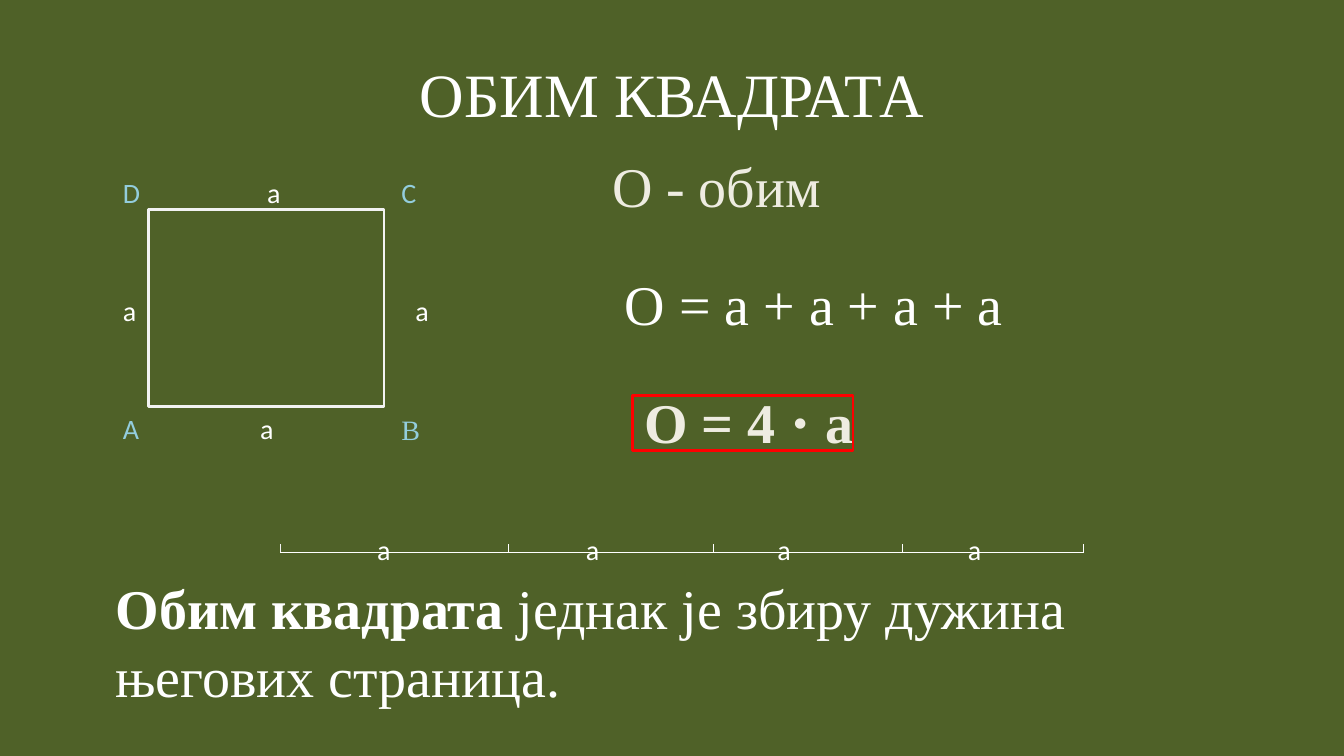
import pptx
import pptx.dml.color
import pptx.enum.shapes
import pptx.enum.text
import pptx.oxml.ns
import pptx.util
import lxml.etree

# The slide is a grid of 100 columns by 100 rows
WIDTH, HEIGHT = 13.33, 7.5
SANS, SERIF = "Calibri", "Times New Roman"
ASCENT = {SANS: 0.95, SERIF: 0.89}
COLORS = {
    "board": "4F6128",
    "white": "FFFFFF",
    "outline": "F2F2F2",
    "vertex": "93CDDD",
    "formula": "EEECE1",
    "frame": "FF0000",
}


def across(columns):
    return pptx.util.Inches(columns * WIDTH / 100)


def down(rows):
    return pptx.util.Inches(rows * HEIGHT / 100)


def color(name):
    return pptx.dml.color.RGBColor.from_string(COLORS[name])


def add_run(paragraph, text, font, size, color_name, bold=False):
    run = paragraph.add_run()
    run.text = text
    run.font.name = font
    run.font.size = pptx.util.Pt(size)
    run.font.bold = bold
    run.font.color.rgb = color(color_name)


def add_box(slide, left, top, width, height, wrap=False):
    box = slide.shapes.add_textbox(across(left), top, across(width), down(height))
    frame = box.text_frame
    frame.word_wrap = wrap
    frame.margin_left = frame.margin_right = 0
    frame.margin_top = frame.margin_bottom = 0
    return frame.paragraphs[0]


def add_label(slide, text, left, baseline, color_name="white", font=SANS, size=20, bold=False):
    """Place one line of text so that it stands on the given baseline row."""
    top = down(baseline) - pptx.util.Pt(ASCENT[font] * size)
    width, height = (2, 4.6) if size == 20 else (30, 8.2)
    paragraph = add_box(slide, left, top, width, height)
    paragraph.alignment = pptx.enum.text.PP_ALIGN.LEFT
    add_run(paragraph, text, font, size, color_name, bold)


def add_outline(slide, left, top, width, height, color_name):
    shape = slide.shapes.add_shape(
        pptx.enum.shapes.MSO_SHAPE.RECTANGLE,
        across(left), down(top), across(width), down(height))
    shape.shadow.inherit = False
    shape.fill.background()
    shape.line.color.rgb = color(color_name)
    shape.line.width = pptx.util.Pt(2)


def add_line(slide, left, top, right, bottom, color_name="white"):
    line = slide.shapes.add_connector(
        pptx.enum.shapes.MSO_CONNECTOR.STRAIGHT,
        across(left), down(top), across(right), down(bottom))
    line.line.color.rgb = color(color_name)
    line.line.width = pptx.util.Pt(0.75)
    properties = line._element.spPr
    lxml.etree.SubElement(properties, pptx.oxml.ns.qn("a:effectLst"))


def add_title(slide, text):
    title = slide.shapes.title
    title.left, title.top = across(5), down(4)
    title.width, title.height = across(90), down(16.67)
    title.text_frame.vertical_anchor = pptx.enum.text.MSO_ANCHOR.MIDDLE
    paragraph = title.text_frame.paragraphs[0]
    paragraph.alignment = pptx.enum.text.PP_ALIGN.CENTER
    add_run(paragraph, text, SERIF, 44, "white")


def add_square(slide, rows):
    add_outline(slide, 11.03, 27.73, 17.55, 26, "outline")
    upper, middle, lower = rows
    left, right = 9.15, 29.86
    # Vertices
    add_label(slide, "D", left, upper, "vertex")
    add_label(slide, "C", right, upper, "vertex")
    add_label(slide, "A", left, lower, "vertex")
    add_label(slide, "B", right, lower, "vertex", SERIF)
    # Sides
    add_label(slide, "a", 19.88, upper)
    add_label(slide, "a", 19.35, lower)
    add_label(slide, "а", left, middle)
    add_label(slide, "а", 30.91, middle)


def add_formulas(slide, rows):
    upper, middle, lower = rows
    add_label(slide, "О - обим", 45.54, upper, "formula", SERIF, 40)
    add_label(slide, "О = а + а + а + а", 46.5, middle, "white", SERIF, 40)
    add_label(slide, "О = 4 ⋅ а", 47.93, lower, "formula", SERIF, 40, True)
    add_outline(slide, 47.04, 52.27, 16.43, 7.33, "frame")


def add_segments(slide):
    ticks = [20.86, 37.81, 53.11, 67.14, 80.65]
    axis = 73.07
    add_line(slide, ticks[0], axis, ticks[-1], axis)
    for tick in ticks:
        add_line(slide, tick, 72, tick, axis, "outline" if tick == ticks[0] else "white")
    for left in (28.06, 43.59, 57.84, 72.02):
        add_label(slide, "a", left, 74)


def add_conclusion(slide):
    paragraph = add_box(slide, 8.6, down(75.7), 85.7, 18.5, wrap=True)
    paragraph.line_spacing = pptx.util.Pt(48.6)
    add_run(paragraph, "Обим квадрата ", SERIF, 40, "white", True)
    add_run(paragraph, "једнак је збиру дужина његових страница.", SERIF, 40, "white")


def main():
    presentation = pptx.Presentation()
    presentation.slide_width = across(100)
    presentation.slide_height = down(100)
    slide = presentation.slides.add_slide(presentation.slide_layouts.get_by_name("Title Only"))
    slide.background.fill.solid()
    slide.background.fill.fore_color.rgb = color("board")

    rows = [26.7 + 15.6 * step for step in range(3)]
    add_title(slide, "ОБИМ КВАДРАТА")
    add_square(slide, rows)
    add_formulas(slide, rows)
    add_segments(slide)
    add_conclusion(slide)
    presentation.save("out.pptx")


if __name__ == "__main__":
    main()
